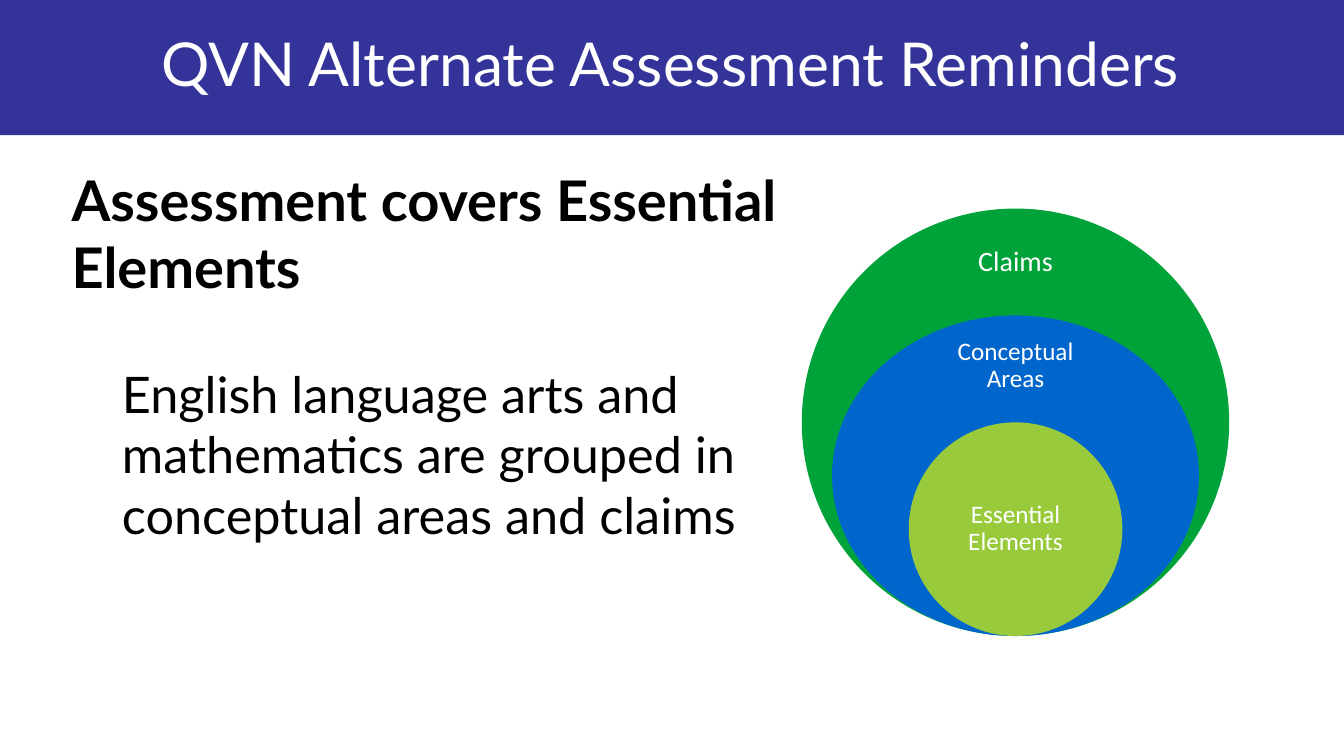
from lxml.etree import SubElement
from pptx import Presentation
from pptx.dml.color import RGBColor
from pptx.enum.shapes import MSO_SHAPE
from pptx.enum.text import MSO_ANCHOR, MSO_AUTO_SIZE, PP_ALIGN
from pptx.oxml.ns import qn
from pptx.util import Pt

MIDDLE = 725.4
BASE = 454.3
RINGS = [
    ("Claims", "00A339", 305.3, 305.3, 20, (106.6, 164.2, 46, 11.5)),
    ("Conceptual Areas", "0066CC", 262.1, 229, 18, (122.4, 239.8, 43.2, 10)),
    ("Essential Elements", "99CA3C", 152.6, 152.6, 18, (108, 339.8, 76.3, 10)),
]


def color(code):
    return RGBColor.from_string(code)


def apply(item, values):
    for name, value in values.items():
        setattr(item, name, value)


def place(item, left, top, width, height):
    apply(item, {"left": Pt(left), "top": Pt(top),
                 "width": Pt(width), "height": Pt(height)})


def frame(item, anchor, inset=None):
    box = item.text_frame
    apply(box, {"word_wrap": True, "auto_size": MSO_AUTO_SIZE.NONE,
                "vertical_anchor": anchor})
    if inset is not None:
        sides = ("left", "top", "right", "bottom")
        apply(box, {f"margin_{side}": Pt(inset) for side in sides})
    return box


def write(para, text, font, size, code, bold=False, **layout):
    run = para.add_run()
    run.text = text
    apply(run.font, {"name": font, "size": Pt(size), "bold": bold})
    run.font.color.rgb = color(code)
    apply(para, layout)


def plain(para, indent):
    props = para._p.get_or_add_pPr()
    props.set("marL", str(Pt(indent)))
    props.set("indent", "0")
    SubElement(props, qn("a:buNone"))


def shape(slide, kind, code, *spot):
    item = slide.shapes.add_shape(kind, *map(Pt, spot))
    item.shadow.inherit = False
    item.fill.solid()
    item.fill.fore_color.rgb = color(code)
    item.line.fill.background()
    return item


def header(slide, text):
    title = slide.shapes.title
    band = shape(slide, MSO_SHAPE.RECTANGLE, "333399", 0, 0, 960, 96.5)
    title.element.addprevious(band.element)
    place(title, 64.8, 0, 828, 95.8)
    para = frame(title, MSO_ANCHOR.MIDDLE).paragraphs[0]
    write(para, text, "Lato", 43.2, "FFFFFF",
          alignment=PP_ALIGN.CENTER, line_spacing=0.9)


def points(slide, head, detail):
    body = slide.placeholders[1]
    place(body, 43.9, 114.5, 525.6, 373.7)
    box = frame(body, MSO_ANCHOR.TOP)
    first = box.paragraphs[0]
    plain(first, 0)
    write(first, head, "Lato", 40, "000000", True,
          space_before=Pt(0), space_after=Pt(40))
    second = box.add_paragraph()
    second.level = 1
    plain(second, 36)
    write(second, detail, "Lato", 36, "000000", space_before=Pt(5))


def ring(slide, text, code, width, height, size, label):
    shape(slide, MSO_SHAPE.OVAL, code,
          MIDDLE - width / 2, BASE - height, width, height)
    wide, top, tall, inset = label
    spot = (MIDDLE - wide / 2, top, wide, tall)
    item = slide.shapes.add_textbox(*map(Pt, spot))
    para = frame(item, MSO_ANCHOR.MIDDLE, inset).paragraphs[0]
    write(para, text, "Calibri", size, "FFFFFF",
          alignment=PP_ALIGN.CENTER, line_spacing=0.9)


def main():
    deck = Presentation()
    apply(deck, {"slide_width": Pt(960), "slide_height": Pt(540)})
    slide = deck.slides.add_slide(deck.slide_layouts[1])
    header(slide, "QVN Alternate Assessment Reminders")
    points(slide, "Assessment covers Essential Elements",
           "English language arts and mathematics are grouped in "
           "conceptual areas and claims")
    for row in RINGS:
        ring(slide, *row)
    deck.save("out.pptx")


if __name__ == "__main__":
    main()
